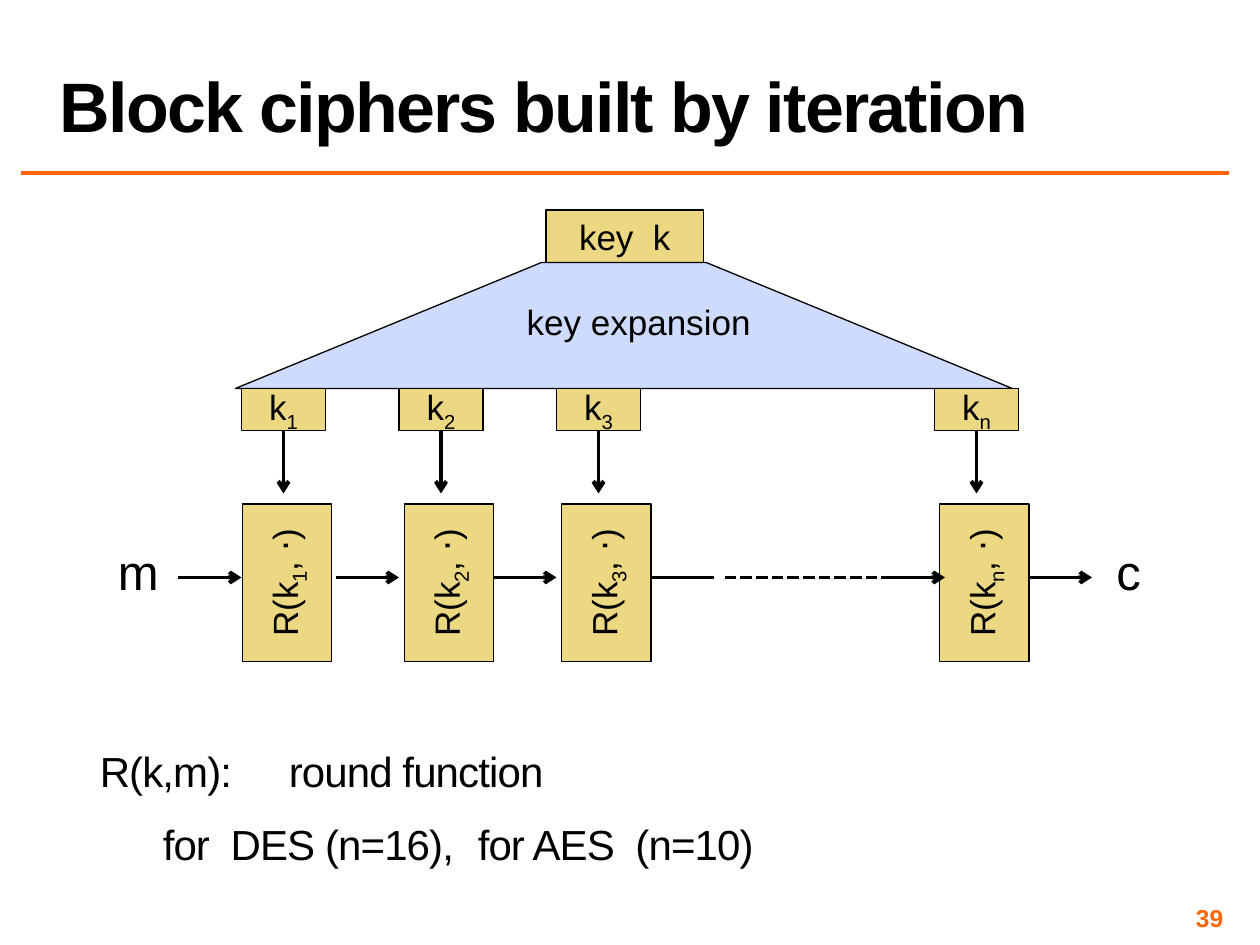
from dataclasses import dataclass
from typing import NamedTuple, Optional

from lxml import etree
from pptx import Presentation
from pptx import util as u
from pptx.dml.color import RGBColor
from pptx.enum import dml, shapes, text
from pptx.oxml.ns import qn

Pt = u.Pt
ALIGN, ANCHOR = text.PP_ALIGN, text.MSO_ANCHOR


@dataclass(frozen=True)
class Theme:
    font: str = "Arial"
    ink: str = "000000"
    accent: str = "FF6600"
    box: str = "ECD882"
    expansion: str = "CFDBFD"
    title: float = 40
    terminal: float = 28
    body: float = 24
    label: float = 20
    number: float = 14
    outline: float = 0.75
    arrow: float = 2.25


class Box(NamedTuple):
    x: float
    y: float
    w: float
    h: float


class Run(NamedTuple):
    words: str
    sub: bool = False


class Round(NamedTuple):
    index: str
    key_x: float    # centre of the round key
    round_x: float  # centre of the round function


class Arrow(NamedTuple):
    x1: float
    y1: float
    x2: float
    y2: float
    head: bool = True
    dash: bool = False


T = Theme()


def rgb(value: str) -> RGBColor:
    return RGBColor.from_string(value)


def place(sp, box: Box) -> None:
    sp.left, sp.top, sp.width, sp.height = map(Pt, box)


def add_runs(p, runs: list[Run], size: float, color: str = T.ink,
             bold: bool = False, spacing: float = 0) -> None:
    for item in runs:
        r = p.add_run()
        r.text = item.words
        r.font.name, r.font.size, r.font.bold = T.font, Pt(size), bold
        r.font.color.rgb = rgb(color)
        rpr = r.font._element
        if item.sub:
            rpr.set("baseline", "-25000")
        if spacing:
            rpr.set("spc", str(int(spacing * 100)))


def add_box(s, box: Box, fill: str, runs: Optional[list[Run]] = None,
            kind=shapes.MSO_SHAPE.RECTANGLE, rotation: float = 0):
    sp = s.shapes.add_shape(kind, *map(Pt, box))
    sp.shadow.inherit = False
    sp.rotation = rotation
    sp.fill.solid()
    sp.fill.fore_color.rgb = rgb(fill)
    sp.line.color.rgb = rgb(T.ink)
    sp.line.width = Pt(T.outline)
    if runs:
        tf = sp.text_frame
        tf.vertical_anchor = ANCHOR.MIDDLE
        tf.paragraphs[0].alignment = ALIGN.CENTER
        add_runs(tf.paragraphs[0], runs, T.label)
    return sp


def add_label(s, box: Box, words: str, size: float, align=ALIGN.CENTER,
              color: str = T.ink, bold: bool = False):
    tf = s.shapes.add_textbox(*map(Pt, box)).text_frame
    tf.word_wrap = False
    p = tf.paragraphs[0]
    p.alignment = align
    add_runs(p, [Run(words)], size, color, bold)
    return tf


def add_line(s, a: Arrow, color: str = T.ink, width: float = T.arrow) -> None:
    cx = s.shapes.add_connector(shapes.MSO_CONNECTOR.STRAIGHT,
                                Pt(a.x1), Pt(a.y1), Pt(a.x2), Pt(a.y2))
    cx.line.color.rgb = rgb(color)
    cx.line.width = Pt(width)
    if a.dash:
        cx.line.dash_style = dml.MSO_LINE.SQUARE_DOT
    if a.head:
        etree.SubElement(cx.line._get_or_add_ln(), qn("a:tailEnd"), type="arrow")
    etree.SubElement(cx._element.spPr, qn("a:effectLst"))


def add_body_line(p, words: str, tabs: list[float]) -> None:
    p.line_spacing = 0.9
    p.space_before = p.space_after = Pt(8)
    ppr = p._p.get_or_add_pPr()
    ppr.set("marL", "0")
    ppr.set("indent", "0")
    etree.SubElement(ppr, qn("a:buNone"))
    stops = etree.SubElement(ppr, qn("a:tabLst"))
    for pos in tabs:
        etree.SubElement(stops, qn("a:tab"), pos=str(Pt(pos)), algn="l")
    add_runs(p, [Run(words)], T.body, spacing=-0.5)


def main() -> None:
    prs = Presentation()
    prs.slide_width, prs.slide_height = Pt(720), Pt(540)
    s = prs.slides.add_slide(prs.slide_layouts[1])

    # Title and rule
    title = s.shapes.title
    place(title, Box(27, 1.5, 675, 85.5))
    tf = title.text_frame
    tf.auto_size = text.MSO_AUTO_SIZE.NONE
    tf.vertical_anchor = ANCHOR.BOTTOM
    p = tf.paragraphs[0]
    p.alignment, p.line_spacing = ALIGN.LEFT, 0.8
    add_runs(p, [Run("Block ciphers built by iteration")], T.title,
             bold=True, spacing=-1)
    add_line(s, Arrow(12, 98.8, 702, 98.8, head=False), T.accent, 2)

    # Explanation, aligned with tab stops
    body = s.placeholders[1]
    place(body, Box(54, 426, 642, 78))
    tf = body.text_frame
    tf.auto_size = text.MSO_AUTO_SIZE.NONE
    tf.margin_left = tf.margin_right = tf.margin_top = tf.margin_bottom = Pt(3)
    add_body_line(tf.paragraphs[0], "R(k,m):\tround function", [99.5])
    add_body_line(tf.add_paragraph(),
                  "\tfor  DES (n=16),\tfor AES  (n=10)", [92, 295])

    # Key and its expansion
    add_box(s, Box(312, 120, 90, 30), T.box, [Run("key  k")])
    trapezoid = add_box(s, Box(134.5, 150, 444, 72), T.expansion,
                        kind=shapes.MSO_SHAPE.TRAPEZOID)
    trapezoid.adjustments[0] = 2.43
    add_label(s, Box(293, 168, 144, 31.5), "key expansion", T.label)

    # Round keys, each feeding its round function
    rounds = [Round("1", 162, 164), Round("2", 252, 256.5),
              Round("3", 342, 346.5), Round("n", 558, 562.5)]
    for rd in rounds:
        index = Run(rd.index, sub=True)
        add_box(s, Box(rd.key_x - 24, 222, 48, 24), T.box, [Run("k"), index])
        add_box(s, Box(rd.round_x - 45, 307.5, 90, 51), T.box,
                [Run("R(k"), index, Run(", ⋅)")], rotation=270)
        add_line(s, Arrow(rd.key_x, 246, rd.key_x, 282))

    # Data flow from m to c
    flow_y = 330
    for x in (102, 192, 282, 372, 504, 588):
        add_line(s, Arrow(x, flow_y, x + 36, flow_y, head=x != 372))
    add_line(s, Arrow(414, flow_y, 504, flow_y, head=False, dash=True))
    add_label(s, Box(60, 306, 38, 41), "m", T.terminal)
    add_label(s, Box(630, 306, 30, 41), "c", T.terminal)

    # Slide number
    tf = add_label(s, Box(534, 516, 168, 17), "39", T.number, ALIGN.RIGHT,
                   T.accent, bold=True)
    tf.word_wrap = True
    tf.vertical_anchor = ANCHOR.MIDDLE
    tf.margin_left = tf.margin_right = tf.margin_top = tf.margin_bottom = Pt(3)

    prs.save("out.pptx")


if __name__ == "__main__":
    main()
